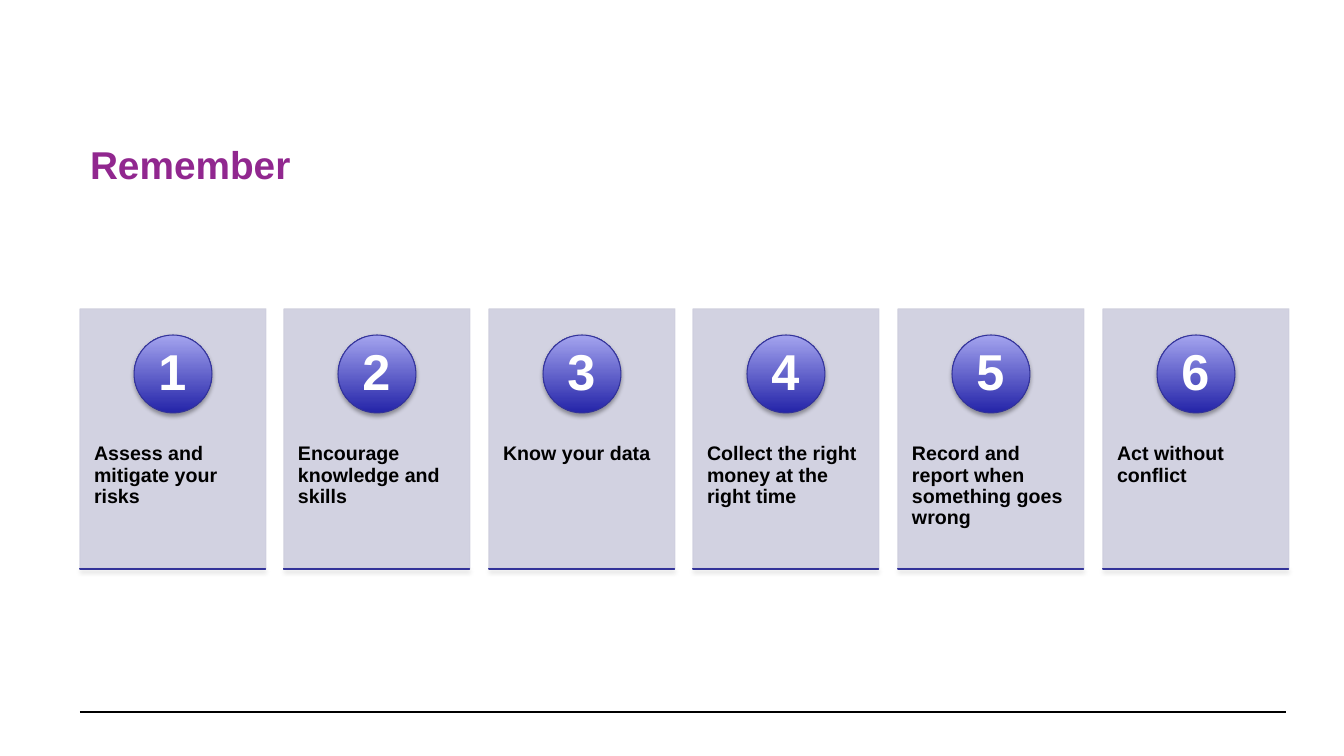
from lxml import etree
from pptx import Presentation
from pptx.dml.color import RGBColor
from pptx.enum.shapes import MSO_CONNECTOR, MSO_SHAPE
from pptx.enum.text import MSO_ANCHOR, MSO_AUTO_SIZE, PP_ALIGN
from pptx.oxml import parse_xml
from pptx.oxml.ns import nsdecls, qn
from pptx.util import Pt

PX = 914400 / 100.8
RECT, OVAL = MSO_SHAPE.RECTANGLE, MSO_SHAPE.OVAL
STRAIGHT = MSO_CONNECTOR.STRAIGHT
LEFT, CENTER = PP_ALIGN.LEFT, PP_ALIGN.CENTER
TOP, MIDDLE = MSO_ANCHOR.TOP, MSO_ANCHOR.MIDDLE
NO_FIT = MSO_AUTO_SIZE.NONE

BLACK = RGBColor(0x00, 0x00, 0x00)
WHITE = RGBColor(0xFF, 0xFF, 0xFF)
PURPLE = RGBColor(0x91, 0x27, 0x8F)
GREY = RGBColor(0xCE, 0xCE, 0xDE)
NAVY = RGBColor(0x33, 0x33, 0x99)
DARK = RGBColor(0x24, 0x24, 0xA8)
LIGHT = RGBColor(0xA4, 0xA4, 0xEF)

SHADOW = f"""<a:effectLst {nsdecls('a')}>
  <a:outerShdw blurRad="40000" dist="23000" dir="5400000" rotWithShape="0">
    <a:srgbClr val="000000"><a:alpha val="35000"/></a:srgbClr>
  </a:outerShdw>
</a:effectLst>"""

TIPS = [
    "Assess and mitigate your risks",
    "Encourage knowledge and skills",
    "Know your data",
    "Collect the right money at the right time",
    "Record and report when something goes wrong",
    "Act without conflict",
]


def px(*vals):
    return [round(val * PX) for val in vals]


def write(shape, text, size, color, align, anchor, pad):
    """Fill a shape with one bold paragraph; pad is (side, top) in px."""
    frame = shape.text_frame
    frame.auto_size = NO_FIT
    frame.word_wrap = True
    frame.vertical_anchor = anchor
    side, top = px(*pad)
    frame.margin_left = frame.margin_right = side
    frame.margin_top = frame.margin_bottom = top
    frame.text = text
    par = frame.paragraphs[0]
    par.alignment = align
    par.line_spacing = 0.9
    par.font.name = "Arial"
    par.font.size = Pt(size)
    par.font.bold = True
    par.font.color.rgb = color


prs = Presentation()
prs.slide_width, prs.slide_height = px(1344, 756)
slide = prs.slides.add_slide(prs.slide_layouts[5])
shapes = slide.shapes

title = shapes.title
title.left, title.top, title.width, title.height = px(80, 132, 1210, 64)
write(title, "Remember", 27.7, PURPLE, LEFT, MIDDLE, (10, 5))
title.text_frame.paragraphs[0].line_spacing = 1.0

rule = shapes.add_connector(STRAIGHT, *px(80, 712, 1286, 712))
rule.line.color.rgb = BLACK
rule.line.width = Pt(0.75)
etree.SubElement(rule._element.spPr, qn("a:effectLst"))

for i, tip in enumerate(TIPS):
    x = 80 + i * 1023 // 5

    card = shapes.add_shape(RECT, *px(x, 309, 186, 260))
    card.shadow.inherit = False
    card.fill.solid()
    card.fill.fore_color.rgb = GREY
    card.line.color.rgb = GREY
    card.line.width = Pt(0.75)
    for color in card._element.spPr.iter(qn("a:srgbClr")):
        etree.SubElement(color, qn("a:alpha"), val="90000")

    label = shapes.add_textbox(*px(x, 408, 186, 156))
    write(label, tip, 14, BLACK, LEFT, TOP, (14, 36))

    ball = shapes.add_shape(OVAL, *px(x + 54, 335, 78, 78))
    digit = shapes.add_textbox(*px(x + 65, 347, 55, 55))
    write(digit, str(i + 1), 36, WHITE, CENTER, MIDDLE, (6, 1))

    base = shapes.add_shape(RECT, *px(x, 569, 186, 0))
    for part in (ball, base):
        part.fill.gradient()
        part.fill.gradient_angle = 90
        for stop, color in zip(part.fill.gradient_stops, (DARK, LIGHT)):
            stop.color.rgb = color
        part.line.color.rgb = NAVY
        part.line.width = Pt(0.75)
        part._element.spPr.append(parse_xml(SHADOW))

prs.save("out.pptx")
